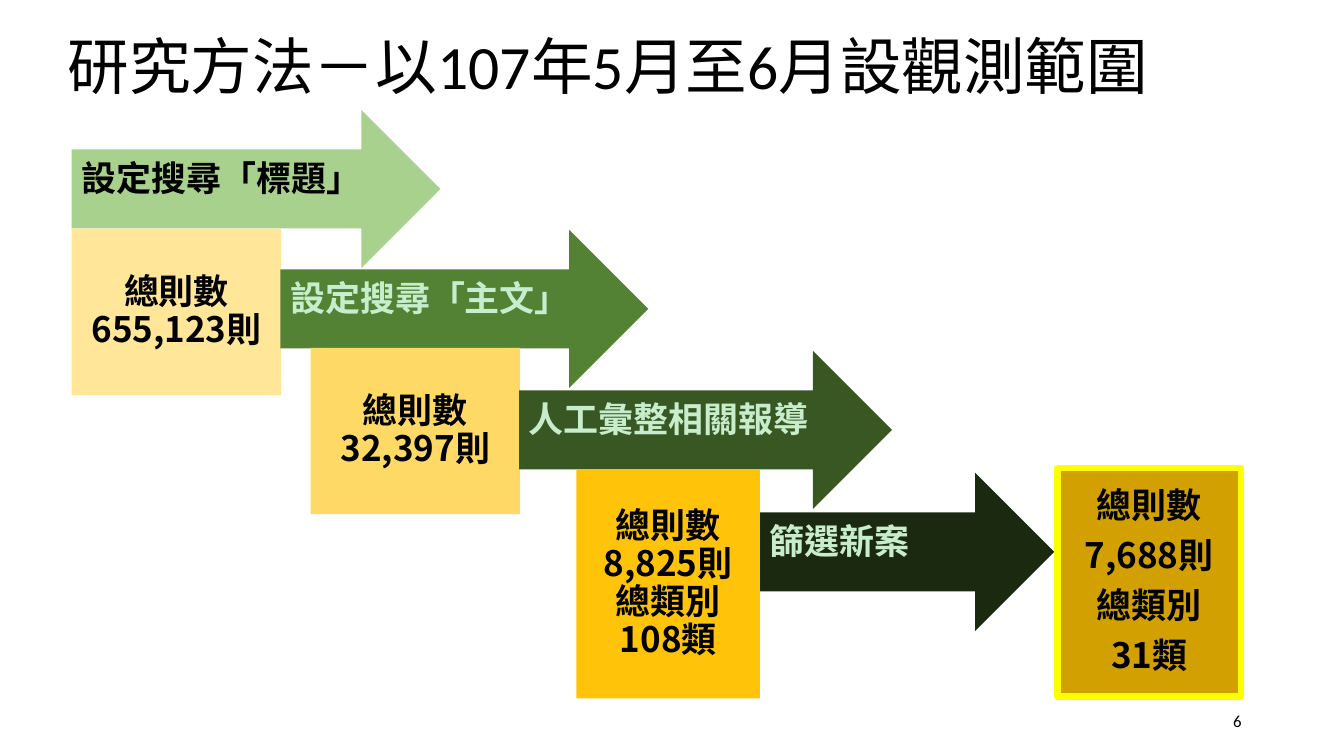
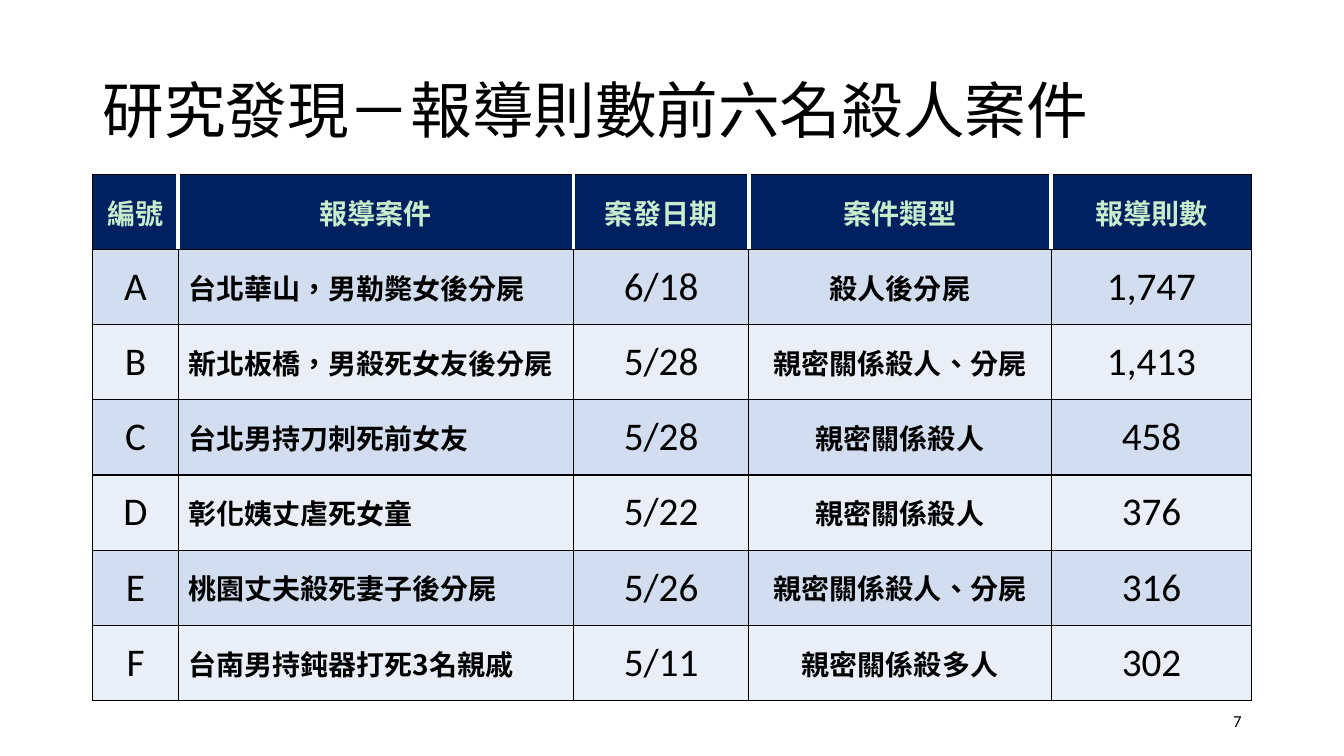
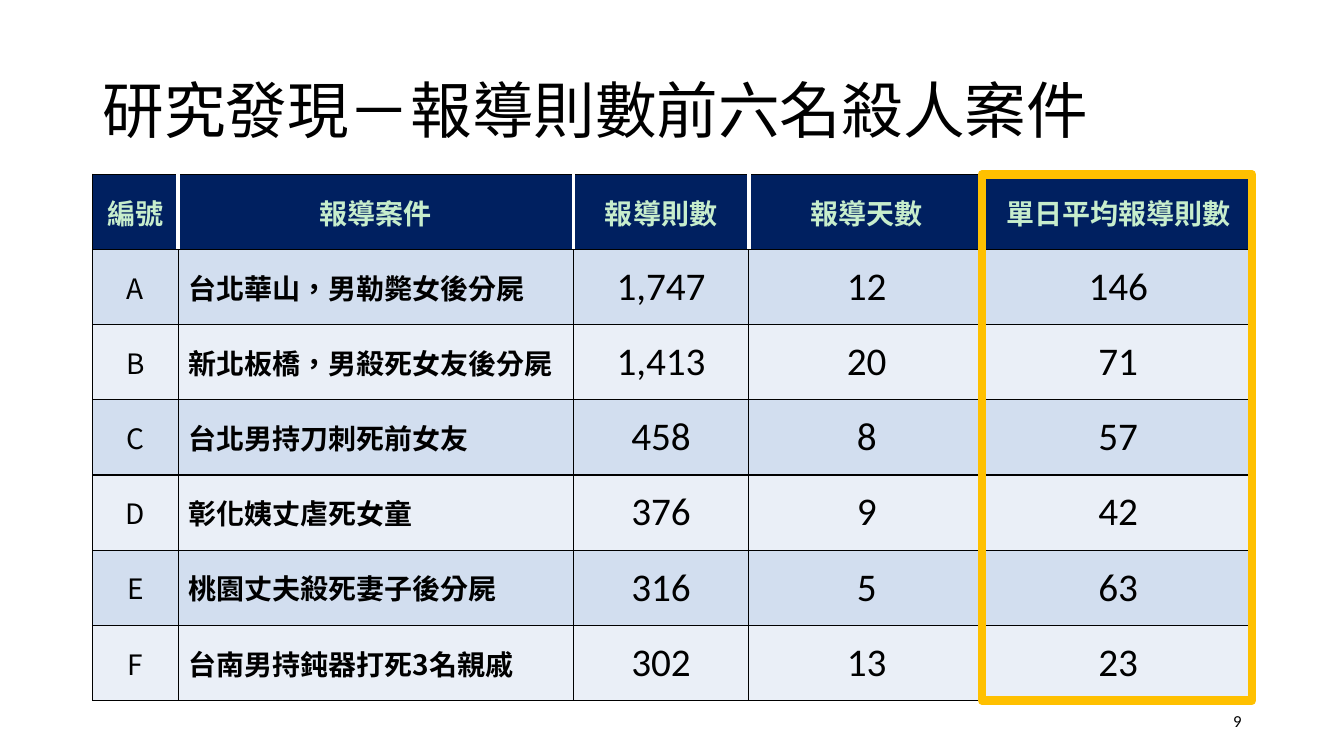
from lxml.etree import SubElement
from pptx import Presentation
from pptx.dml.color import RGBColor
from pptx.enum.shapes import MSO_SHAPE as SHAPE
from pptx.enum.text import MSO_ANCHOR as ANCHOR, MSO_AUTO_SIZE as AUTO, PP_ALIGN as ALIGN
from pptx.oxml.ns import qn
from pptx.util import Pt

COLORS = {
    "black": "000000", "white": "FFFFFF", "mint": "C7EDCC", "navy": "002060",
    "band_dark": "D2DEEF", "band_light": "EAEFF7", "highlight": "FFC000",
    "green1": "A9D18E", "green2": "548235", "green3": "385723", "green4": "1B2911",
    "gold1": "FFE699", "gold2": "FFD966", "gold3": "FFC409", "gold4": "D2A000",
    "yellow": "FFFF00",
}
LATIN, CJK = "Calibri", "Noto Sans CJK SC"
TITLE_BOX = (66, 28.8, 828, 104.4)
TABLE_LEFT, TABLE_TOP, ROW_HEIGHT, ROWS = 66.2, 124.5, 53.7, 7
FIRST_COLS = (61.2, 282.2, 125.3)

# text, left, top, width, fill, text colour
ARROW_HEIGHT = 113
ARROWS = [
    ("設定搜尋「標題」", 51.1, 78.5, 263.5, "green1", "black"),
    ("設定搜尋「主文」", 200.2, 164.2, 262.8, "green2", "mint"),
    ("人工彙整相關報導", 370.8, 250.6, 266.4, "green3", "mint"),
    ("篩選新案", 542.9, 337.7, 210.2, "green4", "mint"),
]
# text, left, top, width, height, fill
COUNTS = [
    ("總則數655,123則", 51.1, 163.4, 149.8, 118.8, "gold1"),
    ("總則數32,397則", 221.8, 248.4, 149.8, 118.8, "gold2"),
    ("總則數 8,825則 總類別108類", 411.8, 335.5, 131, 163.4, "gold3"),
    ("總則數\n7,688則\n總類別\n31類", 755.3, 334.1, 131, 163.4, "gold4"),
]
CASES = [
    "台北華山，男勒斃女後分屍", "新北板橋，男殺死女友後分屍", "台北男持刀刺死前女友",
    "彰化姨丈虐死女童", "桃園丈夫殺死妻子後分屍", "台南男持鈍器打死3名親戚",
]
REPORTS = ["1,747", "1,413", "458", "376", "316", "302"]
DATES = ["6/18", "5/28", "5/28", "5/22", "5/26", "5/11"]
TYPES = ["殺人後分屍", "親密關係殺人、分屍", "親密關係殺人", "親密關係殺人",
         "親密關係殺人、分屍", "親密關係殺多人"]
DAYS = ["12", "20", "8", "9", "5", "13"]
DAILY = ["146", "71", "57", "42", "63", "23"]


def rgb(name):
    return RGBColor.from_string(COLORS[name])


def pts(*values):
    return [Pt(v) for v in values]


def write(tf, text, size, color="black", font=LATIN, bold=False, align=ALIGN.LEFT,
          spacing=None, after=None):
    tf.text = text
    for p in tf.paragraphs:
        p.alignment = align
        if spacing:
            p.line_spacing = spacing
        if after:
            p.space_after = Pt(after)
        for r in p.runs:
            r.font.size, r.font.bold, r.font.name = Pt(size), bold, font
            r.font.color.rgb = rgb(color)
            rPr = r._r.get_or_add_rPr()
            rPr.set("lang", "zh-TW")
            SubElement(rPr, qn("a:ea"), typeface=CJK)


def add_slide(prs, title, number, box=TITLE_BOX, anchor=ANCHOR.MIDDLE):
    s = prs.slides.add_slide(prs.slide_layouts[5])
    sp = s.shapes.title
    sp.left, sp.top, sp.width, sp.height = pts(*box)
    tf = sp.text_frame
    tf.vertical_anchor, tf.auto_size, tf.word_wrap = anchor, AUTO.NONE, True
    write(tf, title, 44, spacing=0.9)

    tf = s.shapes.add_textbox(*pts(678, 500.5, 216, 28.8)).text_frame
    tf.vertical_anchor, tf.word_wrap = ANCHOR.MIDDLE, True
    write(tf, str(number), 12, align=ALIGN.RIGHT)
    return s


def add_block(s, kind, box, fill=None, line=None, line_width=0):
    sp = s.shapes.add_shape(kind, *pts(*box))
    sp.shadow.inherit = False
    if fill:
        sp.fill.solid()
        sp.fill.fore_color.rgb = rgb(fill)
    else:
        sp.fill.background()
    if line:
        sp.line.color.rgb, sp.line.width = rgb(line), Pt(line_width)
    else:
        sp.line.fill.background()
    return sp


def label(sp, text, color, align, right=7.2, bottom=7.2):
    tf = sp.text_frame
    tf.word_wrap, tf.vertical_anchor = True, ANCHOR.MIDDLE
    tf.margin_left, tf.margin_top, tf.margin_right, tf.margin_bottom = pts(7.2, 7.2, right, bottom)
    write(tf, text, 25, color, CJK, True, align, 0.9, 8.75)


def add_border(cell, side, color, width):
    ln = SubElement(cell._tc.get_or_add_tcPr(), qn(f"a:ln{side}"), w=str(Pt(width)))
    fill = SubElement(ln, qn("a:solidFill"))
    SubElement(fill, qn("a:srgbClr"), val=COLORS[color])


def format_cell(cell, fill, left_gap, right_gap):
    """Gaps are the wide white separators; other borders are thin and black."""
    thin, gap = ("black", 1), ("white", 3)
    add_border(cell, "L", *(gap if left_gap else thin))
    add_border(cell, "R", *(gap if right_gap else thin))
    add_border(cell, "T", *thin)
    add_border(cell, "B", *thin)
    cell.fill.solid()
    cell.fill.fore_color.rgb = rgb(fill)
    cell.vertical_anchor = ANCHOR.MIDDLE


def add_case_table(s, widths, columns, gaps, letter_style):
    """Columns are (heading, values, text style); gaps counts the header separators."""
    columns = [("編號", "ABCDEF", letter_style), ("報導案件", CASES, CASE)] + columns
    height = ROW_HEIGHT * ROWS
    table = s.shapes.add_table(ROWS, len(columns),
                               *pts(TABLE_LEFT, TABLE_TOP, sum(widths), height)).table
    table.first_row = table.horz_banding = False
    for row in table.rows:
        row.height = Pt(ROW_HEIGHT)
    for c, (heading, values, style) in enumerate(columns):
        table.columns[c].width = Pt(widths[c])
        head = table.cell(0, c)
        format_cell(head, "navy", 0 < c <= gaps, c < gaps)
        write(head.text_frame, heading, **HEADING)
        for i, value in enumerate(values, 1):
            cell = table.cell(i, c)
            format_cell(cell, "band_dark" if i % 2 else "band_light", False, False)
            write(cell.text_frame, value, **style)


HEADING = dict(size=20, color="mint", bold=True, align=ALIGN.CENTER)
CASE = dict(size=20, font=CJK, bold=True)
TYPE = dict(CASE, align=ALIGN.CENTER)
NUMBER = dict(size=28, align=ALIGN.CENTER)
SMALL_LETTER = dict(size=20, font=CJK, align=ALIGN.CENTER)


def build_method(prs):
    s = add_slide(prs, "研究方法－以107年5月至6月設觀測範圍", 6,
                  (41, 22.3, 853.2, 104.4), ANCHOR.TOP)
    for arrow, count in zip(ARROWS, COUNTS):
        text, left, top, width, fill, color = arrow
        sp = add_block(s, SHAPE.RIGHT_ARROW, (left, top, width, ARROW_HEIGHT), fill)
        label(sp, text, color, ALIGN.LEFT, right=20, bottom=19.5)
        text, *box, fill = count
        outline = ("yellow", 4.5) if count is COUNTS[-1] else ()
        label(add_block(s, SHAPE.RECTANGLE, box, fill, *outline), text, "black", ALIGN.CENTER)


def build_findings(prs):
    title = "研究發現－報導則數前六名殺人案件"
    s = add_slide(prs, title, 7)
    add_case_table(s, FIRST_COLS + (216, 143.3), [
        ("案發日期", DATES, NUMBER), ("案件類型", TYPES, TYPE), ("報導則數", REPORTS, NUMBER),
    ], 4, NUMBER)

    s = add_slide(prs, title, 9)
    add_case_table(s, FIRST_COLS + (168.5, 190.8), [
        ("報導則數", REPORTS, NUMBER), ("報導天數", DAYS, NUMBER),
        ("單日平均報導則數", DAILY, NUMBER),
    ], 3, SMALL_LETTER)
    add_block(s, SHAPE.RECTANGLE, (701.3, TABLE_TOP, 193, ROW_HEIGHT * ROWS),
              line="highlight", line_width=6)


def main():
    prs = Presentation()
    prs.slide_width, prs.slide_height = pts(960, 540)
    build_method(prs)
    build_findings(prs)
    prs.save("out.pptx")


if __name__ == "__main__":
    main()
